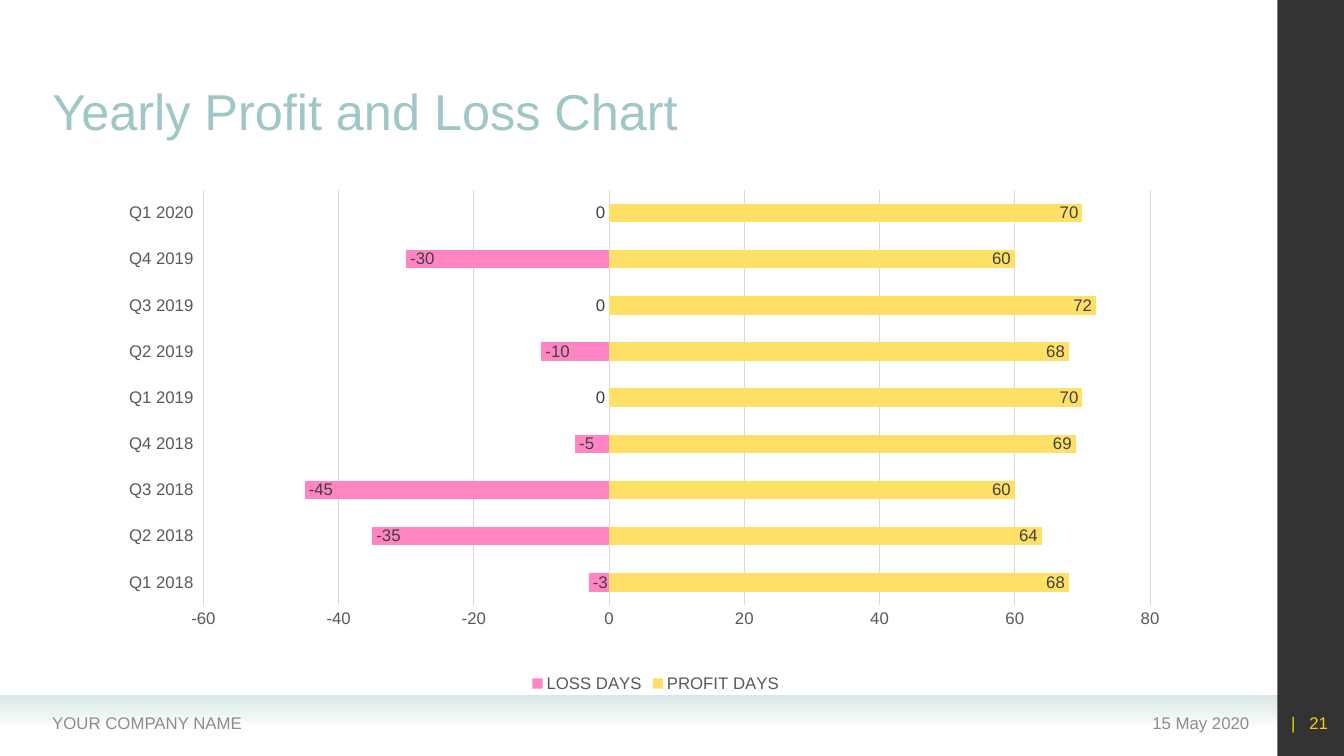
from lxml.etree import SubElement
from pptx import Presentation
from pptx.chart.data import CategoryChartData
from pptx.dml.color import RGBColor
from pptx.enum.chart import (XL_CHART_TYPE, XL_LABEL_POSITION, XL_LEGEND_POSITION,
                             XL_TICK_LABEL_POSITION, XL_TICK_MARK)
from pptx.enum.shapes import MSO_SHAPE
from pptx.enum.text import MSO_ANCHOR, PP_ALIGN
from pptx.oxml.ns import qn
from pptx.util import Inches, Pt

FONT = "Arial"
TEAL, PALE_TEAL, GOLD = "A0C7C5", "D9E9E8", "FFCC00"
FOOTER_GREY, AXIS_GREY, LABEL_GREY, LINE_GREY = "8C8C8C", "595959", "404040", "D9D9D9"

QUARTERS = ["Q1 2018", "Q2 2018", "Q3 2018", "Q4 2018", "Q1 2019",
            "Q2 2019", "Q3 2019", "Q4 2019", "Q1 2020"]
SERIES = [
    ("LOSS DAYS", "FF85C2", [-3, -35, -45, -5, 0, -10, 0, -30, 0]),
    ("PROFIT DAYS", "FFE066", [68, 64, 60, 69, 70, 68, 72, 60, 70]),
]


def rgb(value):
    return RGBColor.from_string(value)


def set_attrs(obj, **values):
    for name, value in values.items():
        setattr(obj, name, value)


def style_font(font, size, color):
    set_attrs(font, name=FONT, size=Pt(size))
    font.color.rgb = rgb(color)


def set_alpha(color_element, percent):
    SubElement(color_element, qn("a:alpha"), val=str(percent * 1000))


def add_rect(slide, box):
    sp = slide.shapes.add_shape(MSO_SHAPE.RECTANGLE, *map(Inches, box))
    sp.shadow.inherit = False
    sp.line.fill.background()
    return sp


def add_footer_band(slide):
    """Add a band that fades out downwards."""
    sp = add_rect(slide, (0, 6.9, 12.67, 0.31))
    sp.fill.gradient()
    sp.fill.gradient_angle = 270
    for stop in sp.fill.gradient_stops:
        stop.color.rgb = rgb(PALE_TEAL)
    set_alpha(list(sp.element.iter(qn("a:srgbClr")))[-1], 0)


def add_side_bar(slide):
    sp = add_rect(slide, (12.67, 0, 0.67, 7.5))
    sp.fill.solid()
    sp.fill.fore_color.rgb = rgb("000000")
    set_alpha(next(sp.element.iter(qn("a:srgbClr"))), 80)


def add_text(slide, box, texts, size, color, align=PP_ALIGN.LEFT, anchor=MSO_ANCHOR.MIDDLE):
    """Add a one-line box with one run per text and return its paragraph."""
    tf = slide.shapes.add_textbox(*map(Inches, box)).text_frame
    set_attrs(tf, word_wrap=True, vertical_anchor=anchor)
    p = tf.paragraphs[0]
    p.alignment = align
    for text in texts:
        r = p.add_run()
        r.text = text
        style_font(r.font, size, color)
    return p


def add_page_number(slide):
    p = add_text(slide, (12.6, 6.97, 0.67, 0.4), ["| ", "21"], 12, GOLD, PP_ALIGN.RIGHT)
    p.runs[0].font.element.set("spc", "333") if hasattr(p.runs[0].font, "element") else \
        next(p.runs[0].font._element.iter()).set("spc", "333")


def set_plot_area(chart, **fractions):
    """Fix the inner plot area as fractions of the chart frame."""
    plot_area = chart.element.find(".//" + qn("c:plotArea"))
    layout = plot_area.find(qn("c:layout"))
    if layout is None:
        layout = SubElement(plot_area, qn("c:layout"))
        plot_area.insert(0, layout)
    manual = SubElement(layout, qn("c:manualLayout"))
    values = {"layoutTarget": "inner", "xMode": "edge", "yMode": "edge", **fractions}
    for name, value in values.items():
        SubElement(manual, qn(f"c:{name}"), val=str(value))


def style_axes(chart):
    for axis in (chart.category_axis, chart.value_axis):
        set_attrs(axis, major_tick_mark=XL_TICK_MARK.NONE, minor_tick_mark=XL_TICK_MARK.NONE)
        style_font(axis.tick_labels.font, 12, AXIS_GREY)
    cat, val = chart.category_axis, chart.value_axis
    cat.tick_label_position = XL_TICK_LABEL_POSITION.LOW
    set_attrs(val, minimum_scale=-60, maximum_scale=80, major_unit=20,
              has_major_gridlines=True)
    val.format.line.fill.background()
    for line in (cat.format.line, val.major_gridlines.format.line):
        line.width = Pt(0.75)
        line.color.rgb = rgb(LINE_GREY)


def add_profit_loss_chart(slide):
    data = CategoryChartData()
    data.categories = QUARTERS
    for name, _, values in SERIES:
        data.add_series(name, values)
    box = map(Inches, (1.28, 1.87, 10.44, 5.04))
    chart = slide.shapes.add_chart(XL_CHART_TYPE.BAR_STACKED, *box, data).chart
    set_attrs(chart, has_title=False, has_legend=True)
    style_font(chart.font, 10, "000000")
    set_attrs(chart.legend, position=XL_LEGEND_POSITION.BOTTOM, include_in_layout=False)
    style_font(chart.legend.font, 12, AXIS_GREY)
    plot = chart.plots[0]
    set_attrs(plot, gap_width=150, overlap=100, vary_by_categories=False)
    for series, (_, color, _) in zip(plot.series, SERIES):
        series.invert_if_negative = False
        series.format.fill.solid()
        series.format.fill.fore_color.rgb = rgb(color)
        labels = series.data_labels
        set_attrs(labels, show_value=True, position=XL_LABEL_POSITION.INSIDE_END)
        style_font(labels.font, 12, LABEL_GREY)
    style_axes(chart)
    set_plot_area(chart, x=0.07, y=0.003, w=0.9, h=0.818)


def main():
    prs = Presentation()
    set_attrs(prs, slide_width=Inches(13.33), slide_height=Inches(7.5))
    slide = prs.slides.add_slide(prs.slide_layouts[6])
    add_footer_band(slide)
    add_side_bar(slide)
    add_text(slide, (9.1, 6.97, 3.39, 0.4), ["15 May 2020"], 12, FOOTER_GREY, PP_ALIGN.RIGHT)
    add_text(slide, (0.42, 6.97, 4.9, 0.4), ["YOUR COMPANY NAME"], 12, FOOTER_GREY)
    add_page_number(slide)
    title = add_text(slide, (0.42, 0.2, 11.21, 1.25), ["Yearly Profit and Loss Chart"],
                     36, TEAL, anchor=MSO_ANCHOR.BOTTOM)
    title.line_spacing = 0.9
    add_profit_loss_chart(slide)
    prs.save("out.pptx")


if __name__ == "__main__":
    main()
